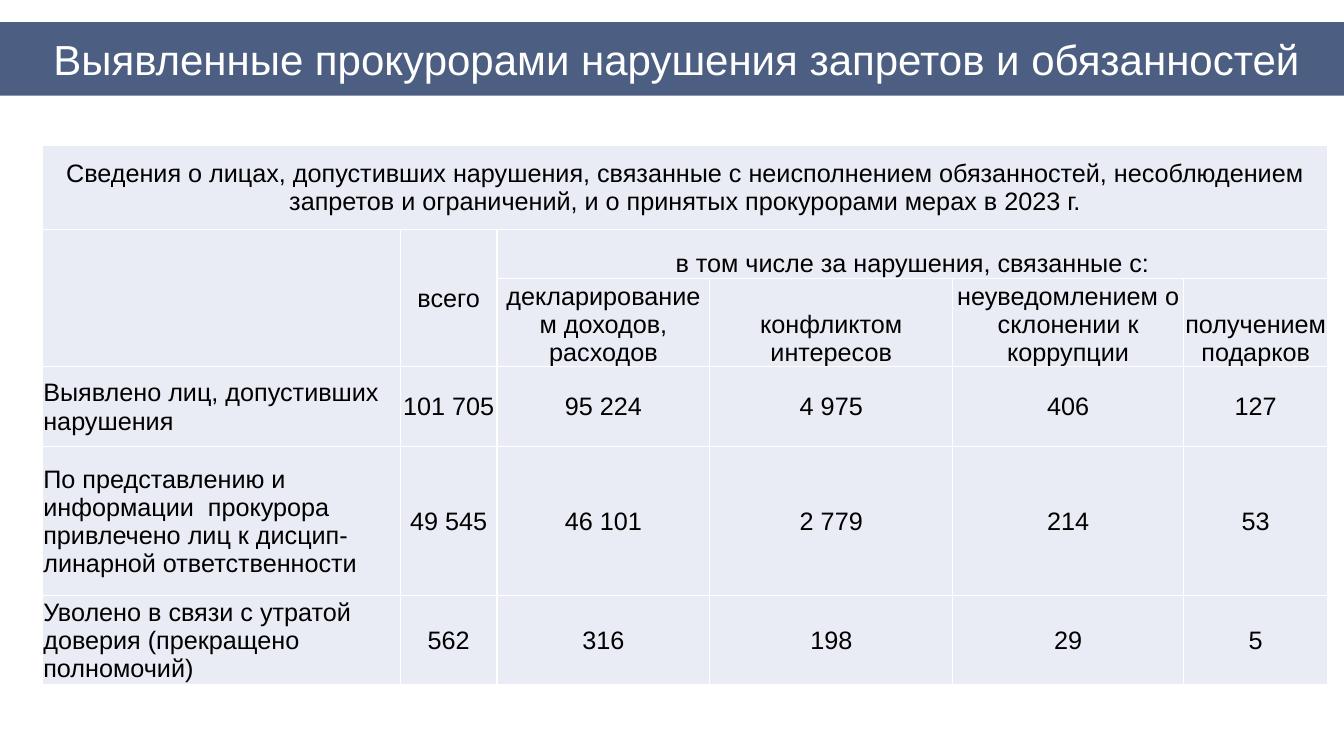
from dataclasses import dataclass
from lxml.etree import SubElement
from pptx import Presentation
from pptx.dml.color import RGBColor
from pptx.enum.text import MSO_ANCHOR, MSO_AUTO_SIZE, PP_ALIGN
from pptx.oxml.ns import qn
from pptx.util import Inches, Pt

# Content
TITLE = "Выявленные прокурорами нарушения запретов и обязанностей"
ROWS = [
    ["Сведения о лицах, допустивших нарушения, связанные с неисполнением обязанностей, "
     "несоблюдением запретов и ограничений, и о принятых прокурорами мерах в 2023 г."],
    ["", "всего", "в том числе за нарушения, связанные с:"],
    ["", "", "декларированием доходов, расходов", "конфликтом интересов",
     "неуведомлением о склонении к коррупции", "получением подарков"],
    ["Выявлено лиц, допустивших нарушения", "101 705", "95 224", "4 975", "406", "127"],
    ["По представлению и информации  прокурора привлечено лиц к дисцип-линарной ответственности",
     "49 545", "46 101", "2 779", "214", "53"],
    ["Уволено в связи с утратой доверия (прекращено полномочий)",
     "562", "316", "198", "29", "5"],
]
MERGES = [((0, 0), (0, 5)), ((1, 0), (2, 0)), ((1, 1), (2, 1)), ((1, 2), (1, 5))]
COLUMN_WIDTHS = [3.55, 0.96, 2.11, 2.41, 2.29, 1.43]
ROW_HEIGHTS = [0.84, 0.48, 0.88, 0.79, 1.48, 0.88]
FIRST_DATA_ROW = 3


@dataclass(frozen=True)
class Theme:
    font: str = "Arial"
    title_size: int = 30
    table_size: int = 18
    banner: str = "203864"
    banner_opacity: int = 80
    cell: str = "E9EBF5"
    border: str = "FFFFFF"
    light_text: str = "FFFFFF"
    dark_text: str = "000000"


THEME = Theme()


def style_para(para, size, color):
    for span in para.runs:
        span.font.name = THEME.font
        span.font.size = Pt(size)
        span.font.color.rgb = RGBColor.from_string(color)


def add_title(page):
    banner = page.shapes.title
    banner.left, banner.top = Inches(0), Inches(0.22)
    banner.width, banner.height = Inches(13.33), Inches(0.73)
    banner.fill.solid()
    banner.fill.fore_color.rgb = RGBColor.from_string(THEME.banner)
    color = banner.fill._xPr.find(qn("a:solidFill"))[0]
    SubElement(color, qn("a:alpha"), val=str(THEME.banner_opacity * 1000))

    frame = banner.text_frame
    frame.text = TITLE
    frame.word_wrap = True
    frame.auto_size = MSO_AUTO_SIZE.NONE
    frame.vertical_anchor = MSO_ANCHOR.MIDDLE
    para = frame.paragraphs[0]
    para.alignment = PP_ALIGN.LEFT
    para.line_spacing = 1.0
    indents = para._p.get_or_add_pPr()
    indents.set("marL", str(Inches(0.04)))
    indents.set("indent", str(Inches(0.39)))
    style_para(para, THEME.title_size, THEME.light_text)


def add_borders(cell):
    properties = cell._tc.get_or_add_tcPr()
    for side in ("lnL", "lnR", "lnT", "lnB"):
        line = SubElement(properties, qn(f"a:{side}"), w=str(Pt(1)))
        SubElement(SubElement(line, qn("a:solidFill")), qn("a:srgbClr"), val=THEME.border)


def format_cell(cell, row, column):
    add_borders(cell)
    cell.fill.solid()
    cell.fill.fore_color.rgb = RGBColor.from_string(THEME.cell)
    cell.margin_left = cell.margin_right = cell.margin_top = Inches(0.01)
    cell.margin_bottom = 0
    group_heading = 0 < row < FIRST_DATA_ROW and column >= 2
    cell.vertical_anchor = MSO_ANCHOR.BOTTOM if group_heading else MSO_ANCHOR.MIDDLE
    row_label = row >= FIRST_DATA_ROW and column == 0
    para = cell.text_frame.paragraphs[0]
    para.alignment = PP_ALIGN.LEFT if row_label else PP_ALIGN.CENTER
    para.space_after = Pt(6)
    style_para(para, THEME.table_size, THEME.dark_text)


def add_violations_table(page):
    table = page.shapes.add_table(
        len(ROW_HEIGHTS), len(COLUMN_WIDTHS), Inches(0.42), Inches(1.44),
        Inches(sum(COLUMN_WIDTHS)), Inches(sum(ROW_HEIGHTS))).table
    table.first_row = table.horz_banding = False
    for column, width in zip(table.columns, COLUMN_WIDTHS):
        column.width = Inches(width)
    for row, height in zip(table.rows, ROW_HEIGHTS):
        row.height = Inches(height)
    for start, end in MERGES:
        table.cell(*start).merge(table.cell(*end))
    for row, texts in enumerate(ROWS):
        for column in range(len(COLUMN_WIDTHS)):
            cell = table.cell(row, column)
            if column < len(texts) and texts[column]:
                cell.text_frame.text = texts[column]
            format_cell(cell, row, column)


def main():
    deck = Presentation()
    deck.slide_width, deck.slide_height = Inches(13.33), Inches(7.5)
    page = deck.slides.add_slide(deck.slide_layouts[5])
    add_title(page)
    add_violations_table(page)
    deck.save("out.pptx")


if __name__ == "__main__":
    main()
